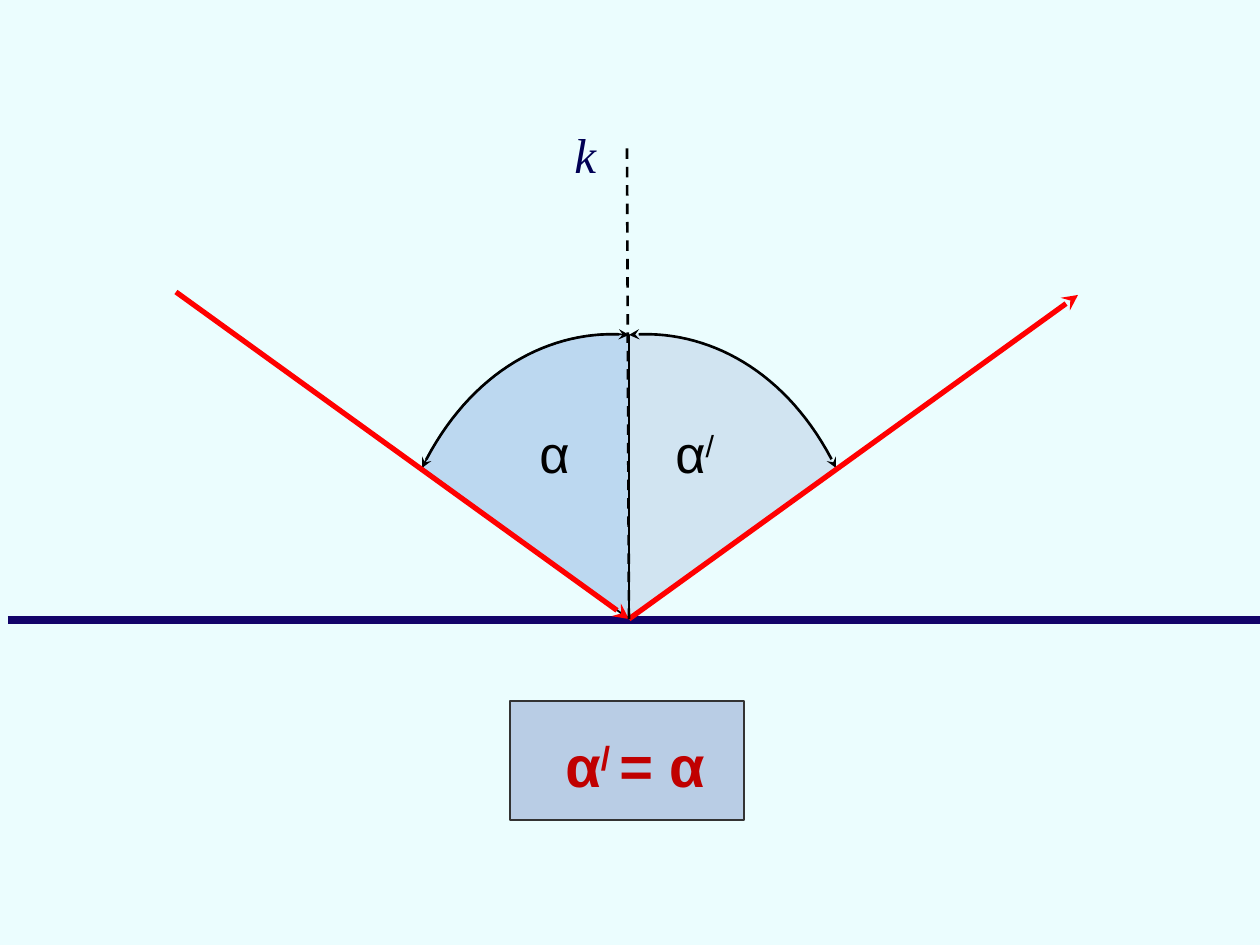
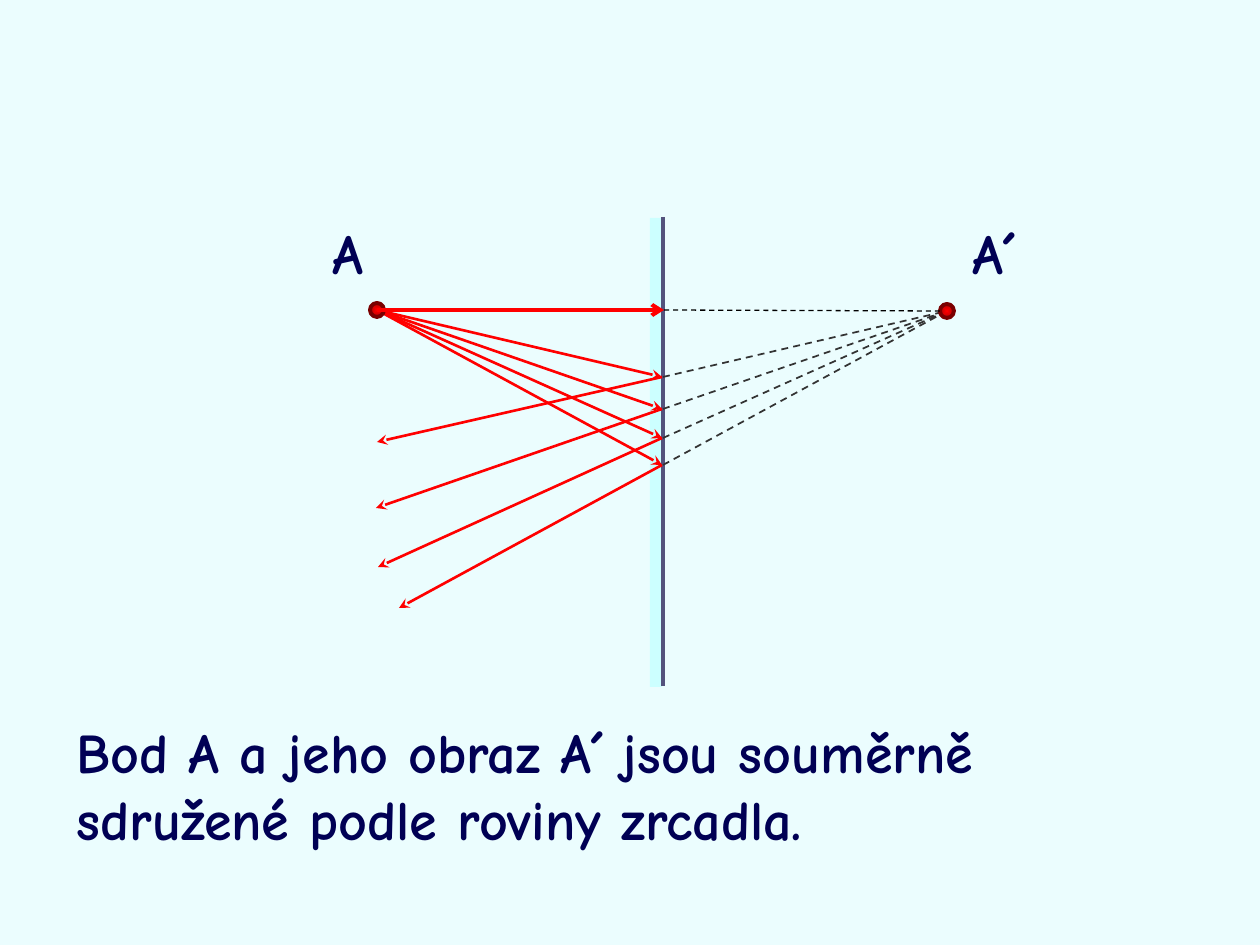
from lxml.etree import SubElement
from pptx import Presentation
from pptx.dml.color import RGBColor
from pptx.enum.dml import MSO_LINE
from pptx.enum.shapes import MSO_CONNECTOR, MSO_SHAPE
from pptx.oxml.ns import qn
from pptx.util import Pt

PX = 914400 / 126
SLIDE_W, SLIDE_H = 1260, 945

PAPER = RGBColor(0xEB, 0xFD, 0xFE)
NAVY = RGBColor(0x00, 0x00, 0x54)
BLACK = RGBColor(0x00, 0x00, 0x00)
GRAPHITE = RGBColor(0x33, 0x33, 0x33)
RED = RGBColor(0xFF, 0x00, 0x00)
DEEP_RED = RGBColor(0xB6, 0x00, 0x00)
RIM_RED = RGBColor(0x7A, 0x00, 0x00)
FORMULA_RED = RGBColor(0xC0, 0x00, 0x00)
FORMULA_FILL = RGBColor(0xB9, 0xCD, 0xE5)
INCIDENT_FILL = RGBColor(0x8E, 0xB4, 0xE3)
SURFACE = RGBColor(0x12, 0x03, 0x69)
MIRROR_EDGE = RGBColor(0x53, 0x53, 0x7D)
MIRROR_GLASS = RGBColor(0xCC, 0xFF, 0xFF)

ANGLE = {"name": "Arial", "size": Pt(30), "color": BLACK}
FORMULA = {"name": "Arial", "size": Pt(33), "bold": True, "color": FORMULA_RED}
NORMAL = {"name": "Times New Roman", "size": Pt(28), "italic": True, "color": NAVY}
COMIC = {"name": "Comic Neue", "size": Pt(32), "bold": True, "color": NAVY}

# Slide 1: law of reflection. Text: box, format, lines of (text, superscript) runs
VERTEX = (629, 619)
ARC = [(422, 468), (470, 370), (552, 328), (629, 335)]
ARC_STEPS = 32
FORMULA_BOX = (510, 701, 234, 119)
LAW_LINES = [
    ((8, 620), (SLIDE_W, 620), SURFACE, 4.5, {}),
    (VERTEX, (1078, 295), RED, 3, {"tail": "stealth"}),
    ((176, 292), VERTEX, RED, 3, {"tail": "stealth"}),
    (VERTEX, (627, 144), BLACK, 1.5, {"dashed": True}),
]
LAW_TEXTS = [
    ((553, 724, 185, 83), FORMULA, [[("α", 0), ("/ ", 1), ("= α", 0)]]),
    ((663, 415, 90, 76), ANGLE, [[("α", 0), ("/", 1)]]),
    ((527, 415, 70, 76), ANGLE, [[("α", 0)]]),
    ((562, 130, 50, 59), NORMAL, [[("k", 0)]]),
]

# Slide 2: image of a point in a plane mirror
POINT, IMAGE = (377, 310), (947, 311)
DOT = 14
MIRROR_X, MIRROR_TOP, MIRROR_BOTTOM = 663, 217, 686
GLASS = (650, 218, 12, 469)
RAYS = [  # y on the mirror, end of the reflected ray
    (377, (377, 442)),
    (409, (376, 508)),
    (438, (378, 567)),
    (465, (399, 608)),
]
MIRROR_TEXTS = [
    ((320, 212, 80, 81), COMIC, [[("A", 0)]]),
    ((960, 212, 110, 81), COMIC, [[("A´", 0)]]),
    ((64, 711, 1101, 149), COMIC, [[("Bod A a jeho obraz A´ jsou souměrně", 0)],
                                   [("sdružené podle roviny zrcadla.", 0)]]),
]


def emu(values):
    return [round(v * PX) for v in values]


def new_slide(prs):
    s = prs.slides.add_slide(prs.slide_layouts[6])
    s.background.fill.solid()
    s.background.fill.fore_color.rgb = PAPER
    return s


def add_heads(shape, head=None, tail=None):
    ln = shape._element.spPr.find(qn("a:ln"))
    for tag, kind in (("a:headEnd", head), ("a:tailEnd", tail)):
        if kind:
            SubElement(ln, qn(tag), type=kind)


def add_line(s, start, end, color, width, dashed=False, tail=None):
    c = s.shapes.add_connector(MSO_CONNECTOR.STRAIGHT, *emu(start), *emu(end))
    c.line.color.rgb = color
    c.line.width = Pt(width)
    if dashed:
        c.line.dash_style = MSO_LINE.DASH
    add_heads(c, tail=tail)
    SubElement(c._element.spPr, qn("a:effectLst"))


def paint(shape, fill=None, line=None, width=1, alpha=None):
    shape.shadow.inherit = False
    if fill is None:
        shape.fill.background()
    else:
        shape.fill.solid()
        shape.fill.fore_color.rgb = fill
    if alpha:
        clr = shape._element.spPr.find(qn("a:solidFill"))[0]
        SubElement(clr, qn("a:alpha"), val=str(alpha * 1000))
    if line is None:
        shape.line.fill.background()
    else:
        shape.line.color.rgb = line
        shape.line.width = Pt(width)


def add_rect(s, box, **look):
    paint(s.shapes.add_shape(MSO_SHAPE.RECTANGLE, *emu(box)), **look)


def add_outline(s, points, close, **look):
    start, *rest = [emu(p) for p in points]
    fb = s.shapes.build_freeform(*start, scale=1.0)
    fb.add_line_segments(rest, close=close)
    sp = fb.convert_to_shape()
    paint(sp, **look)
    return sp


def add_dot(s, center):
    x, y = center
    sp = s.shapes.add_shape(MSO_SHAPE.OVAL, *emu((x - DOT / 2, y - DOT / 2, DOT, DOT)))
    paint(sp, line=RIM_RED, width=2.25)
    sp.fill.gradient()
    for stop, color in zip(sp.fill.gradient_stops, (RED, DEEP_RED)):
        stop.color.rgb = color
    grad = sp._element.spPr.find(qn("a:gradFill"))
    grad.remove(grad.find(qn("a:lin")))
    radial = SubElement(grad, qn("a:path"), {"path": "shape"})
    SubElement(radial, qn("a:fillToRect"), {side: "50000" for side in "ltrb"})


def add_text(s, box, look, lines):
    tf = s.shapes.add_textbox(*emu(box)).text_frame
    tf.word_wrap = True
    for i, runs in enumerate(lines):
        p = tf.paragraphs[0] if i == 0 else tf.add_paragraph()
        if look is NORMAL:
            p.line_spacing = 0.8
        for text, raised in runs:
            r = p.add_run()
            r.text = text
            for key, value in look.items():
                if key == "color":
                    r.font.color.rgb = value
                else:
                    setattr(r.font, key, value)
            if raised:
                r._r.get_or_add_rPr().set("baseline", "30000")


def bezier(controls, t):
    """Point on a cubic curve at parameter t."""
    weights = ((1 - t) ** 3, 3 * t * (1 - t) ** 2, 3 * t * t * (1 - t), t ** 3)
    return tuple(sum(w * c[axis] for w, c in zip(weights, controls)) for axis in (0, 1))


def build_law(prs):
    s = new_slide(prs)
    add_rect(s, FORMULA_BOX, fill=FORMULA_FILL, line=GRAPHITE, width=1.5)
    left_arc = [bezier(ARC, i / ARC_STEPS) for i in range(ARC_STEPS + 1)]
    right_arc = [(2 * VERTEX[0] - x, y) for x, y in left_arc]
    for arc, fill, edge in ((right_arc, FORMULA_FILL, None), (left_arc, INCIDENT_FILL, BLACK)):
        add_outline(s, arc + [VERTEX], True, fill=fill, alpha=50, line=edge)
        sp = add_outline(s, arc, False, line=BLACK, width=1.5)
        add_heads(sp, head="stealth", tail="stealth")
    for start, end, color, width, style in LAW_LINES:
        add_line(s, start, end, color, width, **style)
    for item in LAW_TEXTS:
        add_text(s, *item)


def build_mirror(prs):
    s = new_slide(prs)
    add_rect(s, GLASS, fill=MIRROR_GLASS)
    add_line(s, (MIRROR_X, MIRROR_TOP), (MIRROR_X, MIRROR_BOTTOM), MIRROR_EDGE, 2)
    for y, _ in RAYS:
        add_line(s, POINT, (MIRROR_X - 1, y), RED, 1.5, tail="stealth")
    add_dot(s, POINT)
    for y, end in RAYS:
        add_line(s, (MIRROR_X - 1, y), end, RED, 1.5, tail="stealth")
        add_line(s, (MIRROR_X, y), IMAGE, GRAPHITE, 1, dashed=True)
    add_dot(s, IMAGE)
    add_line(s, POINT, (MIRROR_X + 1, POINT[1]), RED, 2.25, tail="arrow")
    add_line(s, (IMAGE[0] - DOT // 2, IMAGE[1]), (MIRROR_X, POINT[1]), BLACK, 0.75, dashed=True)
    for item in MIRROR_TEXTS:
        add_text(s, *item)


def main():
    prs = Presentation()
    prs.slide_width, prs.slide_height = emu((SLIDE_W, SLIDE_H))
    build_law(prs)
    build_mirror(prs)
    prs.save("out.pptx")


if __name__ == "__main__":
    main()
